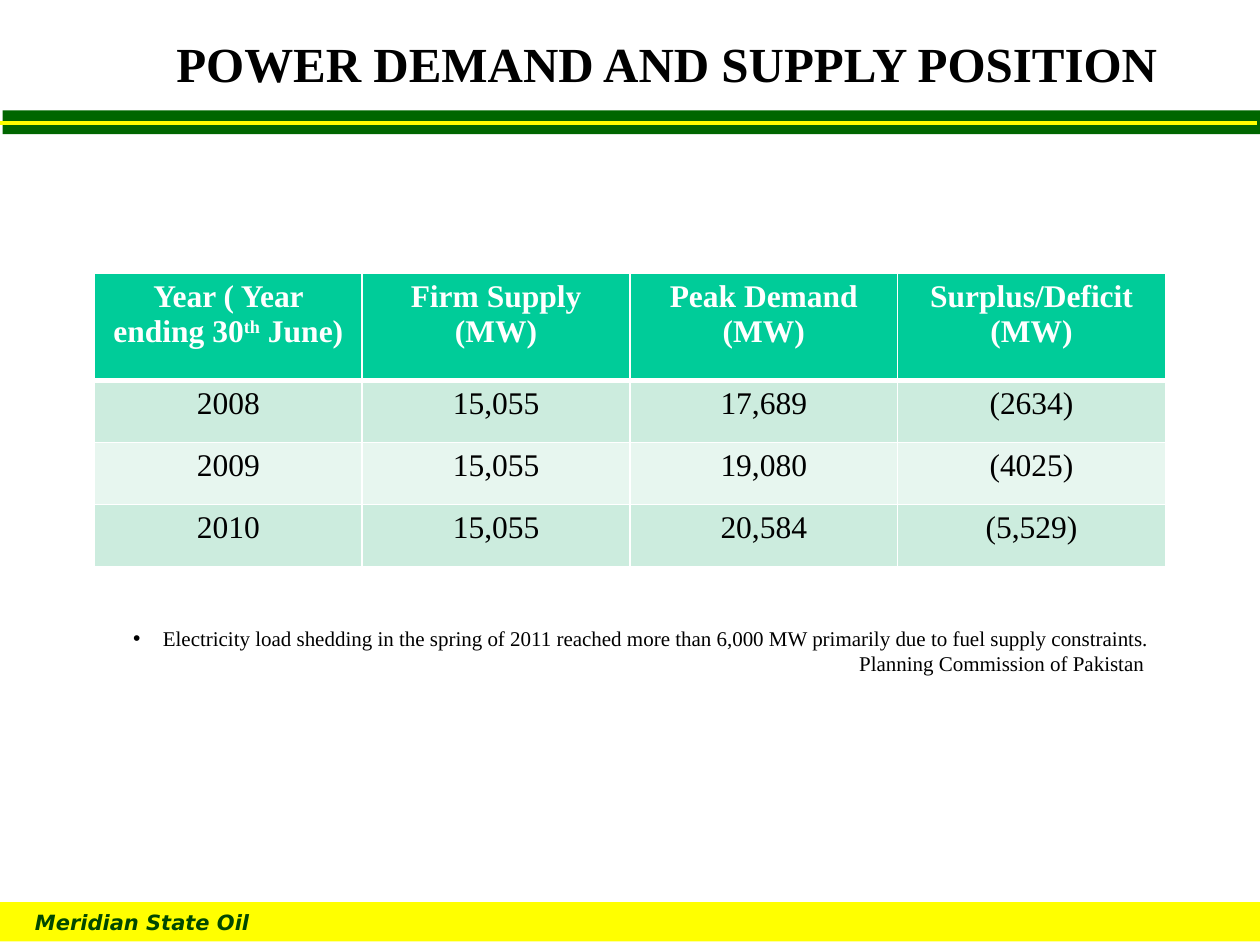
from dataclasses import dataclass

from lxml.etree import SubElement
from pptx import Presentation
from pptx.dml.color import RGBColor
from pptx.enum.shapes import MSO_CONNECTOR, MSO_SHAPE
from pptx.enum.text import MSO_ANCHOR, PP_ALIGN
from pptx.oxml.ns import qn
from pptx.util import Pt

SERIF = "Times New Roman"
SANS = "DejaVu Sans"
WHITE, BLACK, YELLOW = "FFFFFF", "000000", "FFFF00"
GREEN, DARK_GREEN, TEAL = "006600", "004800", "00CC99"
BANDS = ("CCECDE", "E7F6EF")


@dataclass
class Box:
    left: float
    top: float
    width: float
    height: float

    def lengths(self) -> tuple:
        return Pt(self.left), Pt(self.top), Pt(self.width), Pt(self.height)


@dataclass
class Style:
    size: float
    color: str
    font: str = SERIF
    bold: bool = False
    italic: bool = False


def rgb(value: str) -> RGBColor:
    return RGBColor.from_string(value)


def add_run(p, text: str, style: Style, superscript: bool = False) -> None:
    r = p.add_run()
    r.text = text
    r.font.name = style.font
    r.font.size = Pt(style.size)
    r.font.bold = style.bold
    r.font.italic = style.italic
    r.font.color.rgb = rgb(style.color)
    if superscript:
        r.font._element.set("baseline", "30000")


def add_bar(s, box: Box, color: str):
    sp = s.shapes.add_shape(MSO_SHAPE.RECTANGLE, *box.lengths())
    sp.shadow.inherit = False
    sp.fill.solid()
    sp.fill.fore_color.rgb = rgb(color)
    sp.line.fill.background()
    return sp


def add_text(s, box: Box):
    tf = s.shapes.add_textbox(*box.lengths()).text_frame
    tf.word_wrap = True
    return tf


def add_stripe(s, y: float, right: float) -> None:
    line = s.shapes.add_connector(MSO_CONNECTOR.STRAIGHT, Pt(0), Pt(y), Pt(right), Pt(y))
    line.line.color.rgb = rgb(YELLOW)
    line.line.width = Pt(2.25)
    SubElement(line._element.spPr, qn("a:effectLst"))


def set_borders(cell, top: float, bottom: float) -> None:
    tcPr = cell._tc.get_or_add_tcPr()
    for side, width in (("L", 1), ("R", 1), ("T", top), ("B", bottom)):
        ln = SubElement(tcPr, qn(f"a:ln{side}"), w=str(Pt(width)))
        fill = SubElement(ln, qn("a:solidFill"))
        SubElement(fill, qn("a:srgbClr"), val=WHITE)


def add_supply_table(s, box: Box, rows: list, header_height: float) -> None:
    table = s.shapes.add_table(len(rows), len(rows[0]), *box.lengths()).table
    body_height = (box.height - header_height) / (len(rows) - 1)
    for column in table.columns:
        column.width = Pt(box.width / len(rows[0]))
    for i, values in enumerate(rows):
        header = i == 0
        table.rows[i].height = Pt(header_height if header else body_height)
        style = Style(18, WHITE if header else BLACK, bold=header)
        for j, value in enumerate(values):
            cell = table.cell(i, j)
            set_borders(cell, 3 if i == 1 else 1, 3 if header else 1)
            cell.fill.solid()
            cell.fill.fore_color.rgb = rgb(TEAL if header else BANDS[(i - 1) % 2])
            p = cell.text_frame.paragraphs[0]
            p.alignment = PP_ALIGN.CENTER
            parts = value if isinstance(value, tuple) else (value,)
            for k, part in enumerate(parts):
                add_run(p, part, style, superscript=k == 1)


def add_notes_on_supply(s, box: Box) -> None:
    tf = add_text(s, box)
    style = Style(12, BLACK)
    p = tf.paragraphs[0]
    p.alignment = PP_ALIGN.RIGHT
    pPr = p._p.get_or_add_pPr()
    pPr.set("marL", str(Pt(17)))
    pPr.set("indent", str(Pt(-17)))
    SubElement(pPr, qn("a:buFont"), typeface="Arial")
    SubElement(pPr, qn("a:buChar"), char="•")
    add_run(p, "Electricity load shedding in the spring of 2011 reached more than "
               "6,000 MW primarily due to fuel supply constraints.", style)
    p = tf.add_paragraph()
    p.alignment = PP_ALIGN.RIGHT
    add_run(p, "Planning Commission of Pakistan ", style)


def add_footer(s, box: Box) -> None:
    tf = add_bar(s, box, YELLOW).text_frame
    tf.margin_left = Pt(20)
    tf.margin_top = tf.margin_bottom = Pt(0)
    tf.vertical_anchor = MSO_ANCHOR.MIDDLE
    p = tf.paragraphs[0]
    p.alignment = PP_ALIGN.LEFT
    add_run(p, "Meridian State Oil", Style(12, DARK_GREEN, SANS, True, True))


def add_title(s, box: Box) -> None:
    tf = add_text(s, box)
    tf.margin_left = Pt(49)
    tf.vertical_anchor = MSO_ANCHOR.MIDDLE
    p = tf.paragraphs[0]
    p.alignment = PP_ALIGN.CENTER
    add_run(p, "POWER DEMAND AND SUPPLY POSITION", Style(28, BLACK, bold=True))


def main() -> None:
    prs = Presentation()
    prs.slide_width, prs.slide_height = Pt(720), Pt(540)
    s = prs.slides.add_slide(prs.slide_layouts[6])
    rows = [
        [("Year ( Year ending 30", "th", " June)"), "Firm Supply (MW)",
         "Peak Demand (MW)", "Surplus/Deficit (MW)"],
        ["2008", "15,055", "17,689", "(2634)"],
        ["2009", "15,055", "19,080", "(4025)"],
        ["2010", "15,055", "20,584", "(5,529)"],
    ]
    add_footer(s, Box(0, 515.5, 720, 22.5))
    add_bar(s, Box(1.5, 63, 718.5, 13.7), GREEN)
    add_stripe(s, 70.5, 718.5)
    add_title(s, Box(0, 0, 720, 72))
    add_supply_table(s, Box(54, 156.3, 612, 167.5), rows, 61)
    add_notes_on_supply(s, Box(54, 354, 610, 36))
    prs.save("out.pptx")


if __name__ == "__main__":
    main()
